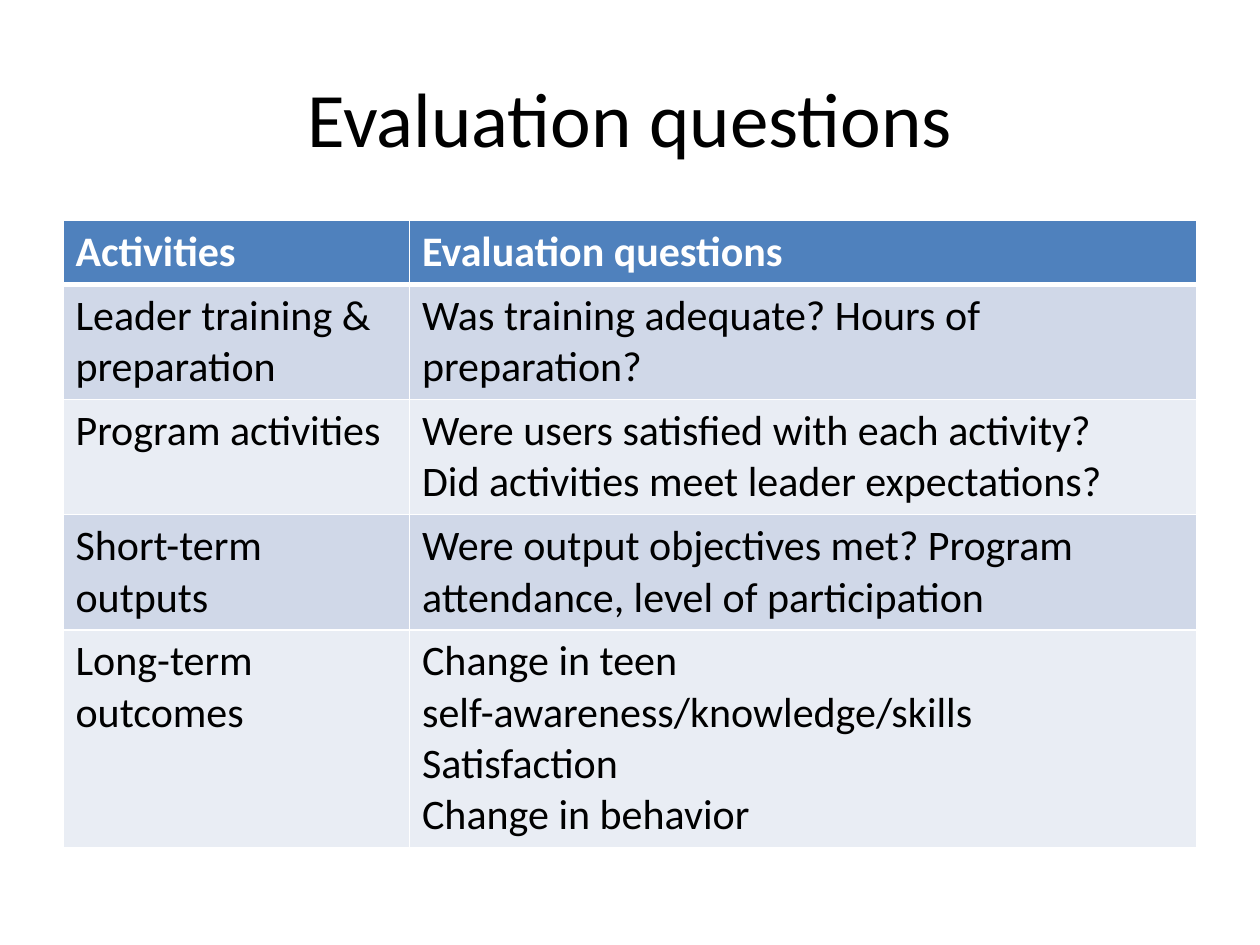
from dataclasses import dataclass

from lxml import etree
from pptx import Presentation
from pptx.dml.color import RGBColor
from pptx.enum.text import MSO_ANCHOR, PP_ALIGN
from pptx.oxml.ns import qn
from pptx.util import Inches, Pt

CENTER = PP_ALIGN.CENTER
MIDDLE = MSO_ANCHOR.MIDDLE
TITLE_ONLY = 5

TITLE = "Evaluation questions"
HEADER = ("Activities", "Evaluation questions")
ROWS = [
    ("Leader training & preparation",
     "Was training adequate? Hours of preparation?"),
    ("Program activities",
     "Were users satisfied with each activity?\n"
     "Did activities meet leader expectations?"),
    ("Short-term outputs",
     "Were output objectives met? Program attendance, level of participation"),
    ("Long-term outcomes",
     "Change in teen self-awareness/knowledge/skills\n"
     "Satisfaction\n"
     "Change in behavior"),
]
COLUMN_WIDTHS = (2.75, 6.25)
ROW_HEIGHT = 0.41
LEFT, TABLE_TOP = 0.5, 1.75


@dataclass(frozen=True)
class Theme:
    font: str = "Calibri"
    title_size: int = 44
    cell_size: int = 24
    text: str = "000000"
    header_text: str = "FFFFFF"
    header_fill: str = "4F81BD"
    bands: tuple = ("D0D8E8", "E9EDF4")
    border: str = "FFFFFF"
    border_width: int = 1
    header_rule_width: int = 3


THEME = Theme()


def format_text(frame, size, color, bold=False):
    for para in frame.paragraphs:
        for span in para.runs:
            span.font.name = THEME.font
            span.font.size = Pt(size)
            span.font.bold = bold
            span.font.color.rgb = RGBColor.from_string(color)


def add_borders(cell, top, bottom):
    """Draw all four cell edges; top and bottom are widths in points."""
    properties = cell._tc.get_or_add_tcPr()
    side = THEME.border_width
    for tag, width in (("a:lnL", side), ("a:lnR", side), ("a:lnT", top), ("a:lnB", bottom)):
        line = etree.SubElement(properties, qn(tag), w=str(Pt(width)))
        fill = etree.SubElement(line, qn("a:solidFill"))
        etree.SubElement(fill, qn("a:srgbClr"), val=THEME.border)


def add_title(slide):
    title = slide.shapes.title
    title.left, title.top = Inches(LEFT), Inches(0.3)
    title.width, title.height = Inches(sum(COLUMN_WIDTHS)), Inches(1.25)
    frame = title.text_frame
    frame.text = TITLE
    frame.vertical_anchor = MIDDLE
    frame.paragraphs[0].alignment = CENTER
    format_text(frame, THEME.title_size, THEME.text)


def add_question_table(slide):
    content = [HEADER, *ROWS]
    table = slide.shapes.add_table(
        len(content), len(HEADER), Inches(LEFT), Inches(TABLE_TOP),
        Inches(sum(COLUMN_WIDTHS)), Inches(ROW_HEIGHT * len(content))).table
    for column, width in zip(table.columns, COLUMN_WIDTHS):
        column.width = Inches(width)

    for row_index, texts in enumerate(content):
        table.rows[row_index].height = Inches(ROW_HEIGHT)
        is_header = row_index == 0
        fill = THEME.header_fill if is_header else THEME.bands[(row_index - 1) % 2]
        color = THEME.header_text if is_header else THEME.text
        top = THEME.header_rule_width if row_index == 1 else THEME.border_width
        bottom = THEME.header_rule_width if is_header else THEME.border_width
        for column_index, text in enumerate(texts):
            cell = table.cell(row_index, column_index)
            cell.text_frame.text = text
            format_text(cell.text_frame, THEME.cell_size, color, is_header)
            add_borders(cell, top, bottom)
            cell.fill.solid()
            cell.fill.fore_color.rgb = RGBColor.from_string(fill)


def main():
    deck = Presentation()
    deck.slide_width, deck.slide_height = Inches(10), Inches(7.5)
    slide = deck.slides.add_slide(deck.slide_layouts[TITLE_ONLY])
    add_title(slide)
    add_question_table(slide)
    deck.save("out.pptx")


if __name__ == "__main__":
    main()
